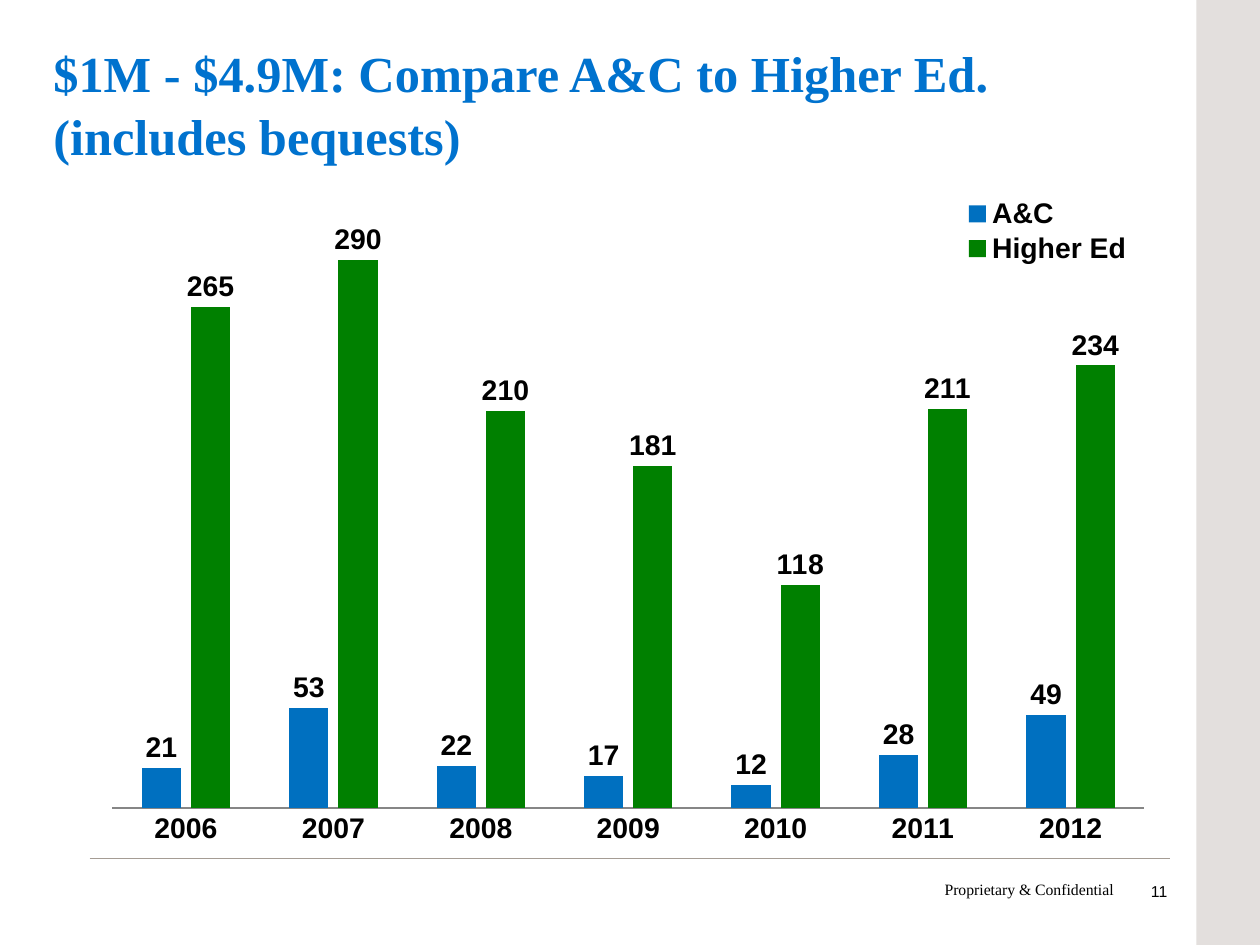
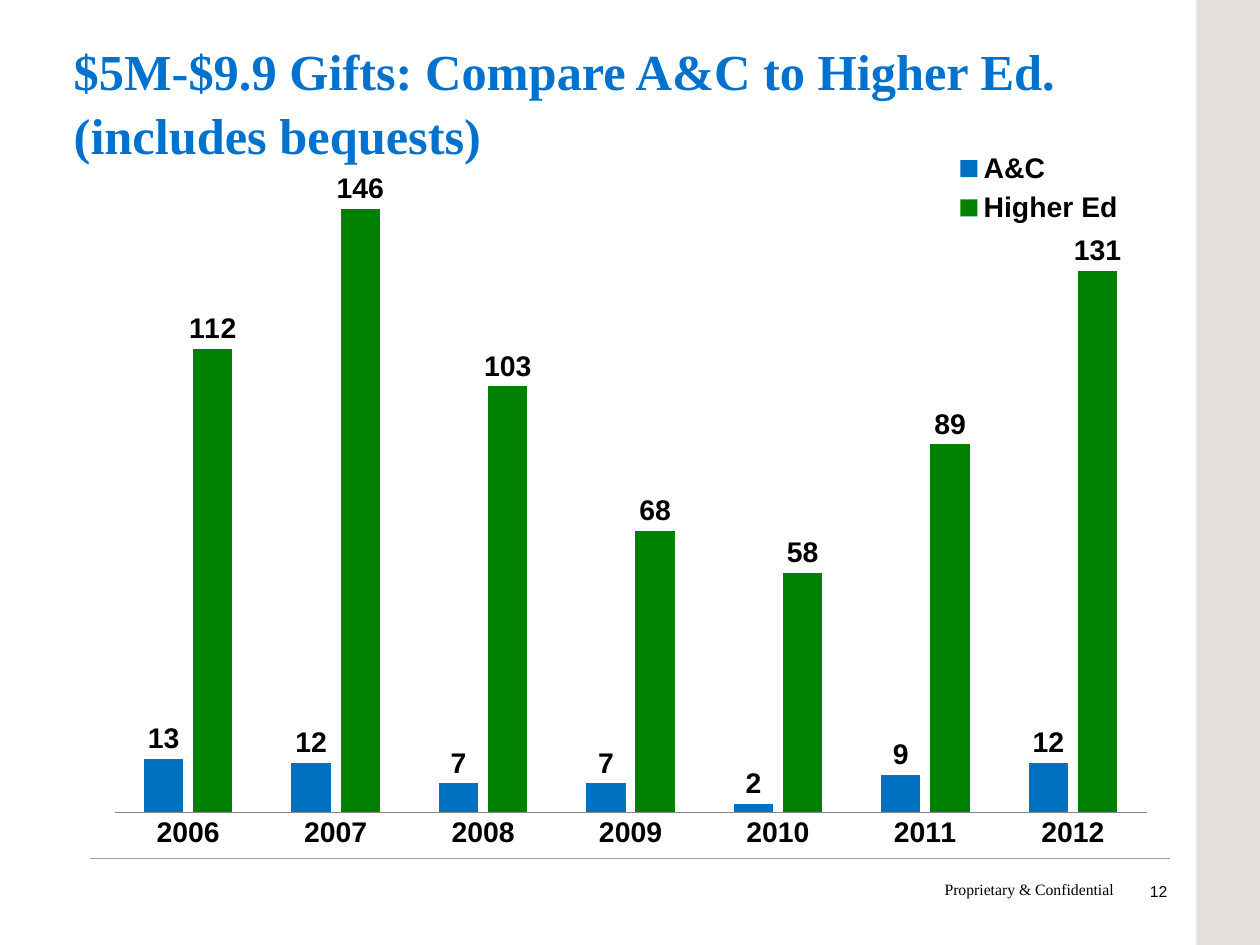
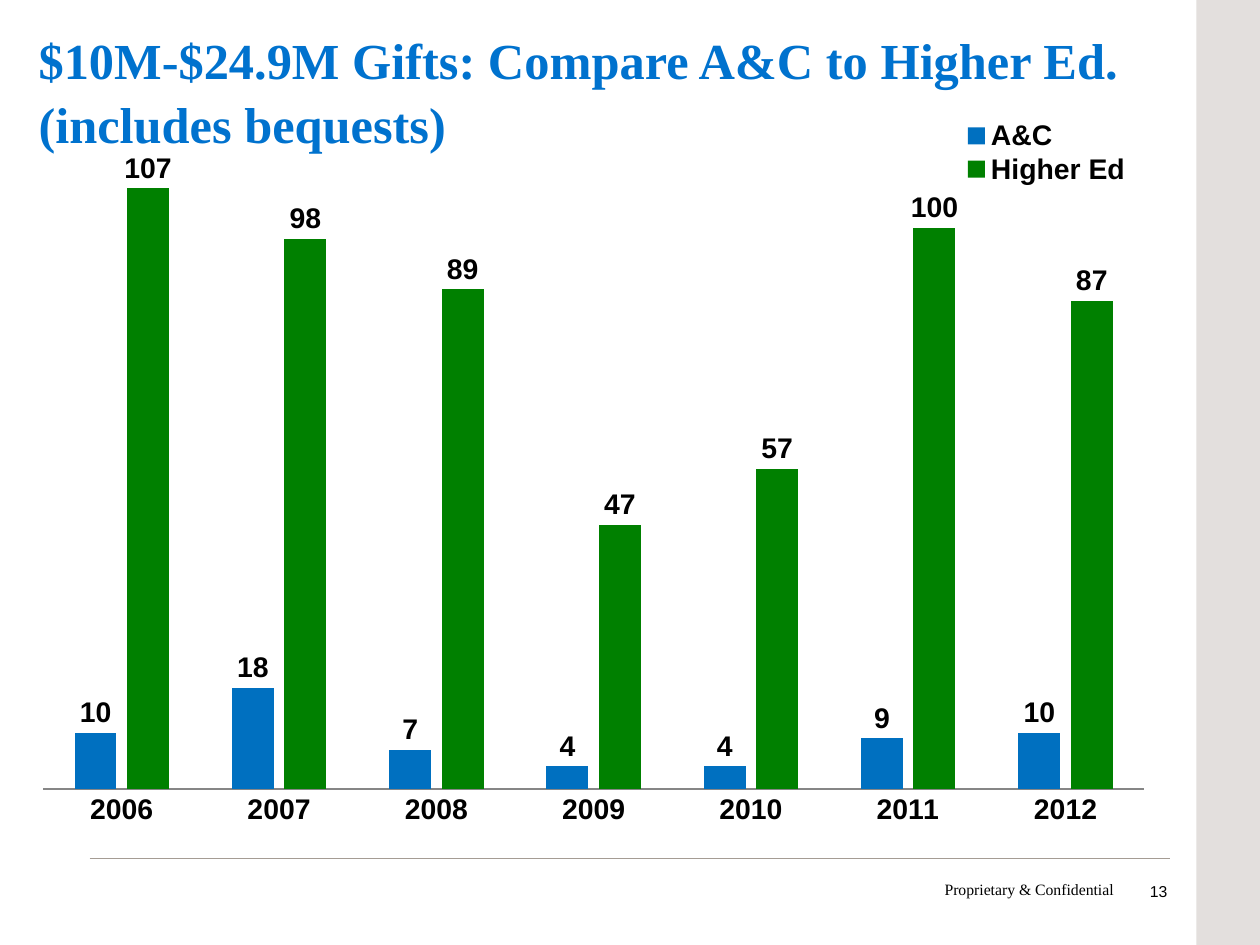
from lxml import etree
from pptx import Presentation
from pptx.chart.data import CategoryChartData
from pptx.dml.color import RGBColor
from pptx.enum.chart import (XL_CHART_TYPE, XL_LABEL_POSITION,
                             XL_LEGEND_POSITION, XL_TICK_MARK)
from pptx.enum.shapes import MSO_CONNECTOR, MSO_SHAPE
from pptx.enum.text import MSO_ANCHOR, MSO_AUTO_SIZE, PP_ALIGN
from pptx.oxml.ns import qn
from pptx.util import Inches, Pt

TITLE_BLUE = RGBColor(0x00, 0x72, 0xCE)
ARTS_BLUE = RGBColor(0x00, 0x70, 0xC0)
ED_GREEN = RGBColor(0x00, 0x80, 0x00)
BAND = RGBColor(0xE3, 0xDF, 0xDD)
RULE = RGBColor(0xA5, 0x9C, 0x94)
AXIS = RGBColor(0x86, 0x86, 0x86)
BLACK = RGBColor(0x00, 0x00, 0x00)
SERIF, SANS = "Times New Roman", "Arial"

YEARS = [str(year) for year in range(2006, 2013)]
FIRST_NUMBER = 11

# Boxes are left, top, width, height: inches on the slide,
# fractions of the chart for "plot" and "legend".
WIDE_PLOT = (0.02, 0.087, 0.96, 0.848)
SLIDES = [
    dict(title="$1M - $4.9M: Compare A&C to Higher Ed. (includes bequests)",
         title_at=(0.37, 0.29), chart_box=(0.8, 0.69, 9.48, 6.88),
         plot=WIDE_PLOT, legend=(0.81, 0.15, 0.16, 0.092), top=350,
         arts=(21, 53, 22, 17, 12, 28, 49),
         ed=(265, 290, 210, 181, 118, 211, 234)),
    dict(title="$5M-$9.9 Gifts: Compare A&C to Higher Ed. (includes bequests)",
         title_at=(0.55, 0.28), chart_box=(0.82, 0.73, 9.48, 6.88),
         plot=WIDE_PLOT, legend=(0.80, 0.08, 0.16, 0.11), top=160,
         arts=(13, 12, 7, 7, 2, 9, 12),
         ed=(112, 146, 103, 68, 58, 89, 131)),
    dict(title="$10M-$24.9M Gifts: Compare A&C to Higher Ed. (includes bequests)",
         title_at=(0.24, 0.18), chart_box=(0.22, 0.53, 10.03, 6.88),
         plot=(0.016, 0.071, 0.968, 0.863),
         legend=(0.823, 0.075, 0.15, 0.087), top=120,
         arts=(10, 18, 7, 4, 4, 9, 10),
         ed=(107, 98, 89, 47, 57, 100, 87)),
]


def set_font(font, name, size, color, bold=False):
    font.name, font.size, font.bold = name, Pt(size), bold
    font.color.rgb = color


def add_small_text(s, box, text, font_name, align):
    tf = s.shapes.add_textbox(*map(Inches, box)).text_frame
    tf.word_wrap = True
    p = tf.paragraphs[0]
    p.alignment = align
    r = p.add_run()
    r.text = text
    set_font(r.font, font_name, 10, BLACK)


def add_frame(s, number):
    """Side band, rule, footer and slide number."""
    add_small_text(s, (9.74, 7.72, 0.65, 0.45), str(number), SANS, PP_ALIGN.RIGHT)
    add_small_text(s, (8.23, 7.71, 1.81, 0.27), "Proprietary & Confidential",
                   SERIF, PP_ALIGN.LEFT)
    rule = s.shapes.add_connector(MSO_CONNECTOR.STRAIGHT, Inches(0.79), Inches(7.57),
                                  Inches(10.32), Inches(7.57))
    rule.line.color.rgb = RULE
    rule.line.width = Pt(0.75)
    etree.SubElement(rule.element.spPr, qn("a:effectLst"))
    band = s.shapes.add_shape(MSO_SHAPE.RECTANGLE, Inches(10.55), 0,
                              Inches(0.56), Inches(8.33))
    band.shadow.inherit = False
    band.fill.solid()
    band.fill.fore_color.rgb = BAND
    band.line.fill.background()


def set_title(s, left, top, text):
    title = s.shapes.title
    title.left, title.top = Inches(left), Inches(top)
    title.width, title.height = Inches(9.87), Inches(1.01)
    tf = title.text_frame
    tf.word_wrap = True
    tf.auto_size = MSO_AUTO_SIZE.NONE
    tf.vertical_anchor = MSO_ANCHOR.TOP
    p = tf.paragraphs[0]
    p.alignment = PP_ALIGN.LEFT
    p.line_spacing = 1.05
    r = p.add_run()
    r.text = text
    set_font(r.font, SERIF, 32, TITLE_BLUE, bold=True)


def make_layout(parent, box, inner=False):
    """Replace the parent's layout with a manual one and return it."""
    for old in parent.findall(qn("c:layout")):
        parent.remove(old)
    layout = etree.SubElement(parent, qn("c:layout"))
    manual = etree.SubElement(layout, qn("c:manualLayout"))
    settings = [("layoutTarget", "inner")] if inner else []
    settings += [("xMode", "edge"), ("yMode", "edge")]
    settings += zip("xywh", box)
    for tag, value in settings:
        etree.SubElement(manual, qn(f"c:{tag}")).set("val", str(value))
    return layout


def add_gift_chart(s, box, arts, ed, top, plot, legend):
    data = CategoryChartData()
    data.categories = YEARS
    data.add_series("A&C", arts)
    data.add_series("Higher Ed", ed)
    chart = s.shapes.add_chart(XL_CHART_TYPE.COLUMN_CLUSTERED,
                               *map(Inches, box), data).chart
    set_font(chart.font, SANS, 18, BLACK, bold=True)
    chart.has_title = False

    columns = chart.plots[0]
    columns.gap_width, columns.overlap = 150, -25
    columns.vary_by_categories = False
    columns.has_data_labels = True
    columns.data_labels.show_value = True
    columns.data_labels.position = XL_LABEL_POSITION.OUTSIDE_END
    for series, color in zip(columns.series, (ARTS_BLUE, ED_GREEN)):
        series.format.fill.solid()
        series.format.fill.fore_color.rgb = color

    years = chart.category_axis
    years.major_tick_mark = years.minor_tick_mark = XL_TICK_MARK.NONE
    years.format.line.color.rgb = AXIS
    years.format.line.width = Pt(0.75)
    gifts = chart.value_axis
    gifts.visible = False
    gifts.has_major_gridlines = False
    gifts.minimum_scale, gifts.maximum_scale = 0, top

    chart.has_legend = True
    chart.legend.position = XL_LEGEND_POSITION.TOP
    chart.legend.include_in_layout = False
    plot_area = next(chart.element.iter(qn("c:plotArea")))
    plot_area.insert(0, make_layout(plot_area, plot, inner=True))
    legend_el = next(chart.element.iter(qn("c:legend")))
    legend_el.find(qn("c:legendPos")).addnext(make_layout(legend_el, legend))


def add_comparison_slide(prs, number, title, title_at, chart_box, **chart_options):
    s = prs.slides.add_slide(prs.slide_layouts.get_by_name("Title Only"))
    add_frame(s, number)
    set_title(s, *title_at, title)
    add_gift_chart(s, chart_box, **chart_options)


def main():
    prs = Presentation()
    prs.slide_width, prs.slide_height = Inches(11.11), Inches(8.33)
    for number, content in enumerate(SLIDES, FIRST_NUMBER):
        add_comparison_slide(prs, number, **content)
    prs.save("out.pptx")


if __name__ == "__main__":
    main()
